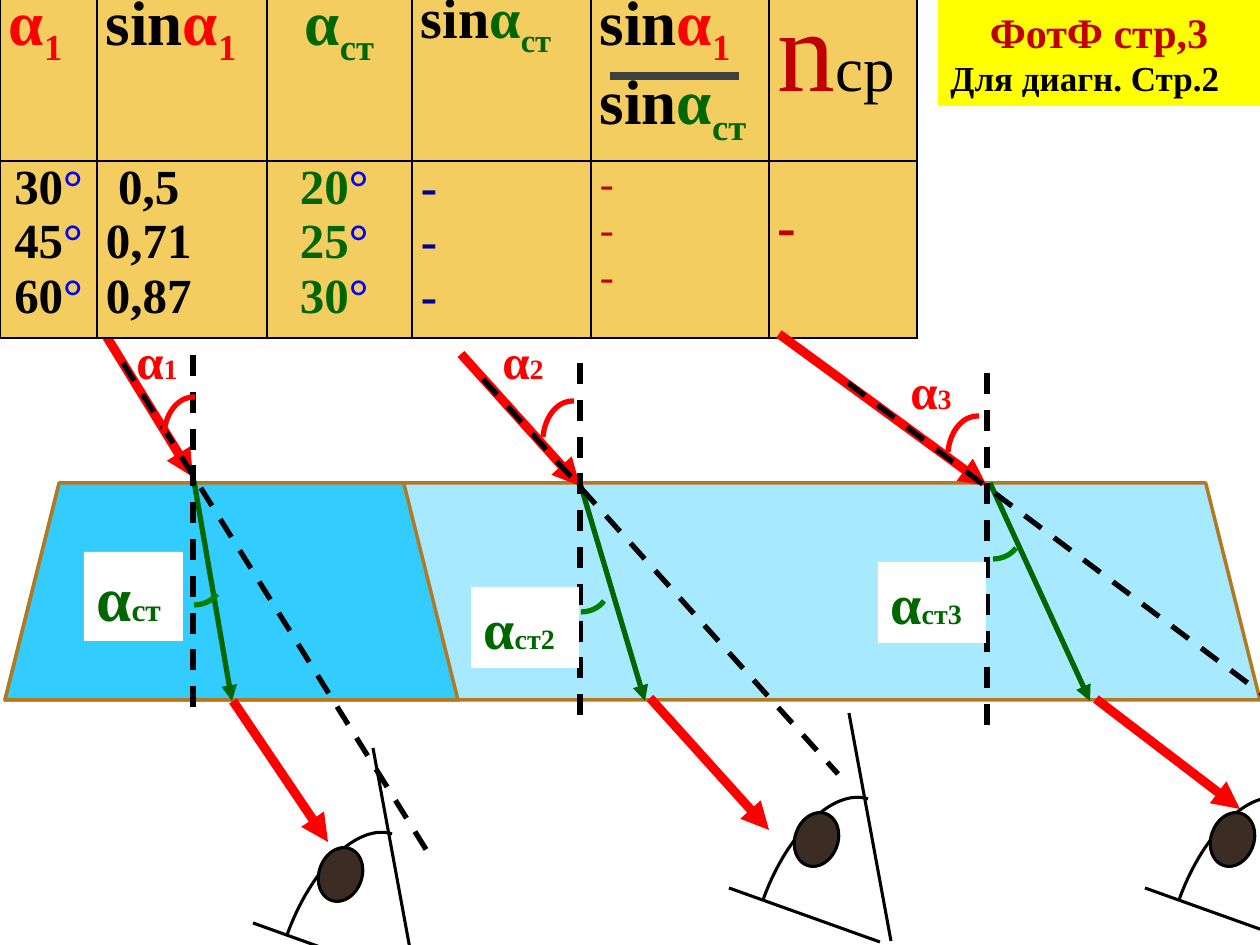
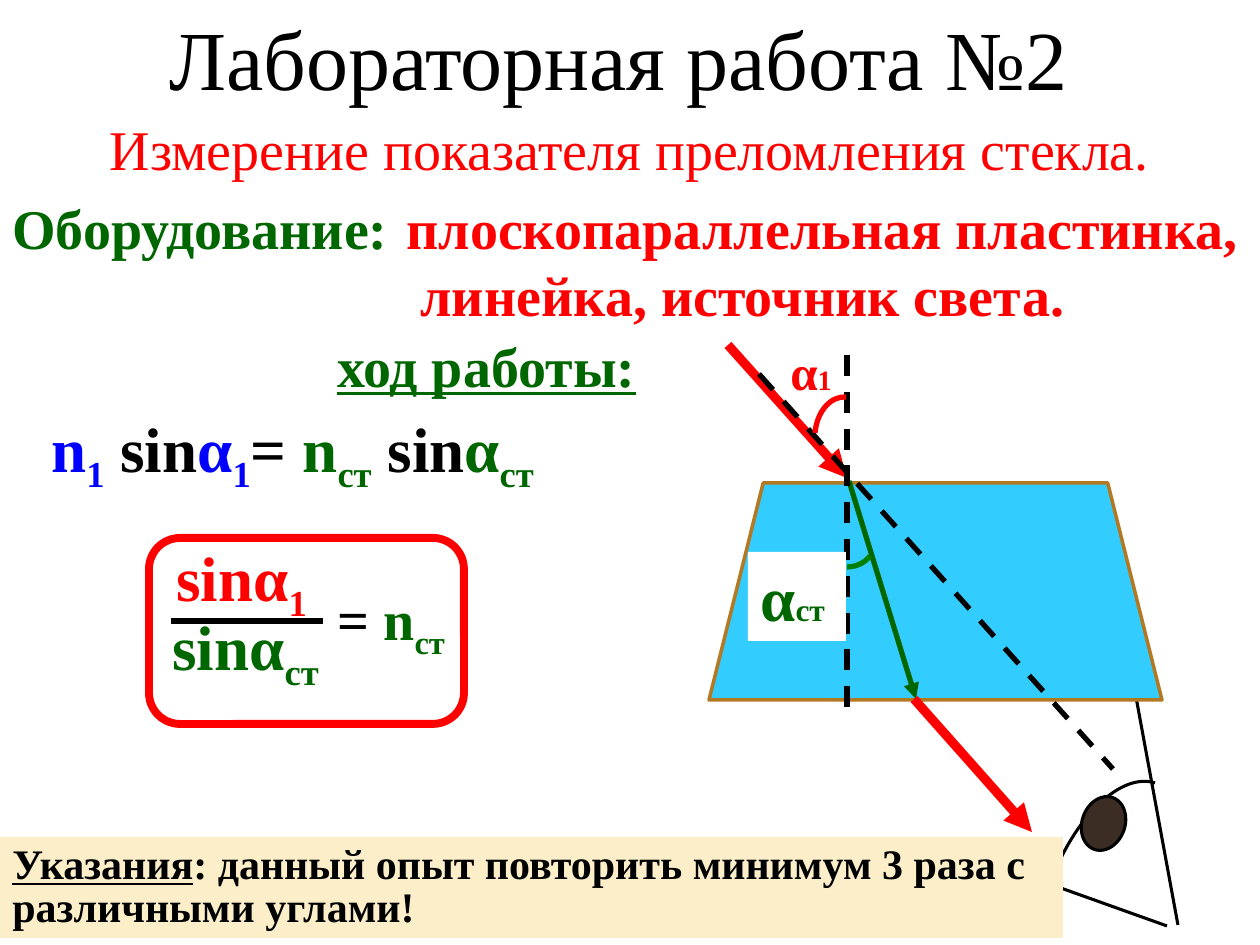
from lxml.etree import SubElement
from pptx import Presentation
from pptx.dml.color import RGBColor
from pptx.enum.dml import MSO_LINE
from pptx.enum.shapes import MSO_CONNECTOR, MSO_SHAPE
from pptx.enum.text import MSO_ANCHOR, PP_ALIGN
from pptx.oxml.ns import qn
from pptx.util import Pt

FONT = "Times New Roman"
BLACK, WHITE, RED, GREEN = "000000", "FFFFFF", "FF0000", "006600"
BLUE, NAVY, WINE, ARC = "0000FF", "000099", "C00000", "008000"
GLASS, EDGE, PUPIL = "33CCFF", "B27822", "3B2C24"
SAND, CREAM, YELLOW, GREY = "F3CD60", "FBEEC9", "FFFF00", "404040"
WIDTH, HEIGHT = 1260, 945


def px(n):
    return round(n * 914400 / 126)


def rgb(code):
    return RGBColor.from_string(code)


def write(frame, lines, size=32, color=BLACK, bold=True, align=None,
          line=False, pitch=None):
    """Fill a frame; a run is text or (text, colour, size), and a leading _ lowers it."""
    frame.word_wrap = True
    for i, runs in enumerate(lines):
        para = frame.paragraphs[0] if i == 0 else frame.add_paragraph()
        para.alignment = align or PP_ALIGN.LEFT
        if pitch:
            para.line_spacing = Pt(pitch)
        for item in runs:
            text, *rest = (item,) if isinstance(item, str) else item
            run = para.add_run()
            run.text = text.removeprefix("_")
            font = run.font
            font.name, font.bold, font.underline = FONT, bold, line
            font.color.rgb = rgb(rest[0] if rest else color)
            font.size = Pt(rest[1] if len(rest) > 1 else size)
            if text.startswith("_"):
                run._r.get_or_add_rPr().set("baseline", "-25000")


def label(slide, x, y, w, h, lines, **style):
    box = slide.shapes.add_textbox(px(x), px(y), px(w), px(h))
    write(box.text_frame, lines, **style)


def paint(shape, fill=None, line=None, width=1):
    shape.shadow.inherit = False
    if fill:
        shape.fill.solid()
        shape.fill.fore_color.rgb = rgb(fill)
    else:
        shape.fill.background()
    if line:
        shape.line.color.rgb = rgb(line)
        shape.line.width = Pt(width)
    else:
        shape.line.fill.background()


def block(slide, kind, x, y, w, h, fill=None, line=None, width=1):
    shape = slide.shapes.add_shape(kind, px(x), px(y), px(w), px(h))
    paint(shape, fill, line, width)
    return shape


def card(slide, x, y, w, h, fill, lines, anchor=MSO_ANCHOR.TOP, **style):
    frame = block(slide, MSO_SHAPE.RECTANGLE, x, y, w, h, fill).text_frame
    frame.vertical_anchor = anchor
    write(frame, lines, **style)
    return frame


def stroke(slide, start, end, color=BLACK, width=1.75, dash=False, arrow=False):
    line = slide.shapes.add_connector(
        MSO_CONNECTOR.STRAIGHT, *map(px, (*start, *end)))
    line.line.color.rgb = rgb(color)
    line.line.width = Pt(width)
    if dash:
        line.line.dash_style = MSO_LINE.DASH
    props = line._element.spPr
    if arrow:
        SubElement(props.find(qn("a:ln")), qn("a:tailEnd"), type="triangle")
    SubElement(props, qn("a:effectLst"))


def curve(slide, origin, knots, color, width):
    """Draw a cubic curve from origin; the three knots are offsets from it."""
    x, y = origin
    build = slide.shapes.build_freeform(px(x), px(y))
    build.add_line_segments([(px(x + a), px(y + b)) for a, b in knots],
                            close=False)
    shape = build.convert_to_shape()
    path = next(shape._element.iter(qn("a:path")))
    bend = SubElement(path, qn("a:cubicBezTo"))
    for leg in path.findall(qn("a:lnTo")):
        bend.append(leg[0])
        path.remove(leg)
    paint(shape, None, color, width)


def plate(slide, x, w, alpha=None):
    shape = block(slide, MSO_SHAPE.TRAPEZOID, x, 483, w, 217, GLASS, EDGE, 2)
    if alpha:
        tone = shape._element.spPr.find(qn("a:solidFill")).find(qn("a:srgbClr"))
        SubElement(tone, qn("a:alpha"), val=str(alpha * 1000))


def eye(slide, x, y, back=True):
    curve(slide, (x + 139, y + 86), [(-34, -11), (-81, 34), (-105, 101)],
          BLACK, 1.75)
    stroke(slide, (x + 151, y + 229), (x, y + 175))
    if back:
        stroke(slide, (x + 162, y + 228), (x + 120, y))
    pupil = block(slide, MSO_SHAPE.OVAL, x + 66, y + 99, 43, 55,
                  PUPIL, BLACK, 1.75)
    pupil.rotation = 19.6


def trial(slide, mark, sub, normal, beam, bent, exit, ghost, arc, bow, tag,
          box, size):
    """Draw one light path through the plate with its angles."""
    x, y = normal
    stroke(slide, *beam, RED, 5.25, arrow=True)
    stroke(slide, *bent, GREEN, 3, arrow=True)
    stroke(slide, normal, (x, y + 364), BLACK, 3, dash=True)
    label(slide, *tag, 79, 72, [["α", (mark, RED, 16)]], size=28, color=RED)
    card(slide, *box, WHITE, [["α", (sub, GREEN, size // 2)]],
         size=size, color=GREEN)
    stroke(slide, *exit, RED, 5.25, arrow=True)
    stroke(slide, *ghost, BLACK, 3, dash=True)
    curve(slide, bow, [(9, 0), (18, -4), (23, -11)], ARC, 3)
    curve(slide, arc, [(2, -22), (16, -37), (31, -36)], RED, 3)


def cell_box(cell, left=9, top=0):
    cell.margin_left, cell.margin_right = px(left), px(9)
    cell.margin_top, cell.margin_bottom = px(top), 0
    props = cell._tc.get_or_add_tcPr()
    for side in ("lnL", "lnR", "lnT", "lnB"):
        edge = SubElement(props, qn("a:" + side), w=str(Pt(1)))
        SubElement(SubElement(edge, qn("a:solidFill")), qn("a:srgbClr"), val=BLACK)
    cell.fill.solid()
    cell.fill.fore_color.rgb = rgb(SAND)


def results(slide):
    wides = [97, 170, 145, 179, 178, 148]
    table = slide.shapes.add_table(
        2, 6, 0, px(-11), px(sum(wides)), px(349)).table
    for col, wide in zip(table.columns, wides):
        col.width = px(wide)
    for row, tall in zip(table.rows, (172, 177)):
        row.height = px(tall)

    red = [("α", RED), ("_1", RED)]
    green = [("α", GREEN), ("_ст", GREEN)]
    mid = PP_ALIGN.CENTER
    heads = [
        ([red], {}),
        ([["sin", *red]], {}),
        ([green], {"align": mid}),
        ([["sin", *green]], {"size": 32}),
        ([["sin", *red], ["sin", *green]], {}),
        ([[("n", WINE, 66), "ср"]], {"bold": False}),
    ]
    degree = ("°", BLUE)
    dashes = [["-"]] * 3
    values = [
        ([[n, degree] for n in ("30", "45", "60")], {"align": mid}),
        ([[" 0,5"], ["0,71"], ["0,87"]], {}),
        ([[(n, GREEN), degree] for n in ("20", "25", "30")], {}),
        (dashes, {"color": NAVY}),
        (dashes, {"color": WINE, "size": 24, "bold": False}),
        ([["-"]], {"color": WINE, "size": 32}),
    ]
    pads = {(1, 2): {"left": 33}, (1, 5): {"top": 35}}
    for r, (row, size) in enumerate(((heads, 36), (values, 28))):
        for c, (lines, style) in enumerate(row):
            cell = table.cell(r, c)
            cell_box(cell, **pads.get((r, c), {}))
            write(cell.text_frame, lines, **{"size": size, **style})
    stroke(slide, (610, 76), (739, 76), GREY, 4.5)


def angles(slide):
    plate(slide, 5, 1255, alpha=43)
    eye(slide, 253, 748)
    plate(slide, 5, 453)
    trial(slide, "1", "ст", normal=(193, 355),
          beam=((105, 334), (193, 477)), bent=((194, 481), (232, 701)),
          exit=((233, 701), (328, 842)), ghost=((123, 363), (432, 859)),
          arc=(164, 433), bow=(194, 605), tag=(124, 324),
          box=(84, 552, 99, 89), size=36)
    results(slide)
    trial(slide, "2", "ст2", normal=(580, 363),
          beam=((461, 354), (580, 486)), bent=((580, 483), (645, 701)),
          exit=((650, 698), (769, 830)), ghost=((483, 379), (838, 774)),
          arc=(543, 437), bow=(581, 612), tag=(490, 324),
          box=(471, 587, 108, 81), size=32)
    eye(slide, 729, 713)
    trial(slide, "3", "ст3", normal=(987, 373),
          beam=((779, 334), (987, 486)), bent=((990, 483), (1090, 701)),
          exit=((1096, 699), (1240, 809)), ghost=((848, 383), (1285, 711)),
          arc=(948, 452), bow=(993, 559), tag=(898, 354),
          box=(878, 562, 108, 81), size=32)
    eye(slide, 1145, 713, back=False)
    frame = card(slide, 938, 0, 322, 106, YELLOW,
                 [[("ФотФ стр,3", WINE, 24)], ["Для диагн. Стр.2"]], size=20)
    frame.paragraphs[0].alignment = PP_ALIGN.CENTER


def formulas(slide):
    label(slide, 39, 403, 558, 89, [[
        ("n", BLUE), ("_1", BLUE), " sin", ("α", BLUE), ("_1", BLUE), "= ",
        ("n", GREEN), ("_ст", GREEN), " sin", ("α", GREEN), ("_ст", GREEN),
    ]], size=36)
    label(slide, 164, 532, 200, 102, [["sinα", "_1"]], size=36, color=RED)
    label(slide, 160, 601, 195, 102, [["sinα", "_ст"]], size=36, color=GREEN)
    stroke(slide, (171, 621), (323, 621), BLACK, 3)
    label(slide, 325, 578, 163, 103, [["= ", ("n", GREEN), ("_ст", GREEN)]])


def lab(slide):
    eye(slide, 1016, 697)
    label(slide, 157, 0, 984, 115, [["Лабораторная работа №2"]],
          size=48, bold=False)
    label(slide, 0, 108, WIDTH, 81,
          [["Измерение показателя преломления стекла."]],
          color=RED, bold=False, align=PP_ALIGN.CENTER)
    label(slide, 0, 187, 404, 81, [["Оборудование:"]], color=GREEN)
    label(slide, 394, 187, 866, 149,
          [["плоскопараллельная пластинка,"], [" линейка, источник света."]],
          color=RED)
    label(slide, 325, 325, 326, 81, [["ход работы:"]], color=GREEN, line=True)
    plate(slide, 709, 453)
    trial(slide, "1", "ст", normal=(847, 355),
          beam=((728, 345), (847, 478)), bent=((849, 481), (916, 699)),
          exit=((914, 699), (1032, 832)), ghost=((759, 374), (1113, 769)),
          arc=(815, 433), bow=(847, 567), tag=(778, 335),
          box=(748, 552, 98, 89), size=36)
    formulas(slide)
    note = card(slide, 0, 837, 1063, 101, CREAM,
                [["Указания",
                  ": данный опыт повторить минимум 3 раза с различными углами!"]],
                anchor=MSO_ANCHOR.MIDDLE, size=24, pitch=25)
    note.paragraphs[0].runs[0].font.underline = True
    block(slide, MSO_SHAPE.ROUNDED_RECTANGLE, 149, 538, 315, 186,
          line=RED, width=4.5)


def main():
    deck = Presentation()
    deck.slide_width, deck.slide_height = px(WIDTH), px(HEIGHT)
    for draw in (angles, lab):
        draw(deck.slides.add_slide(deck.slide_layouts[6]))
    deck.save("out.pptx")


if __name__ == "__main__":
    main()
